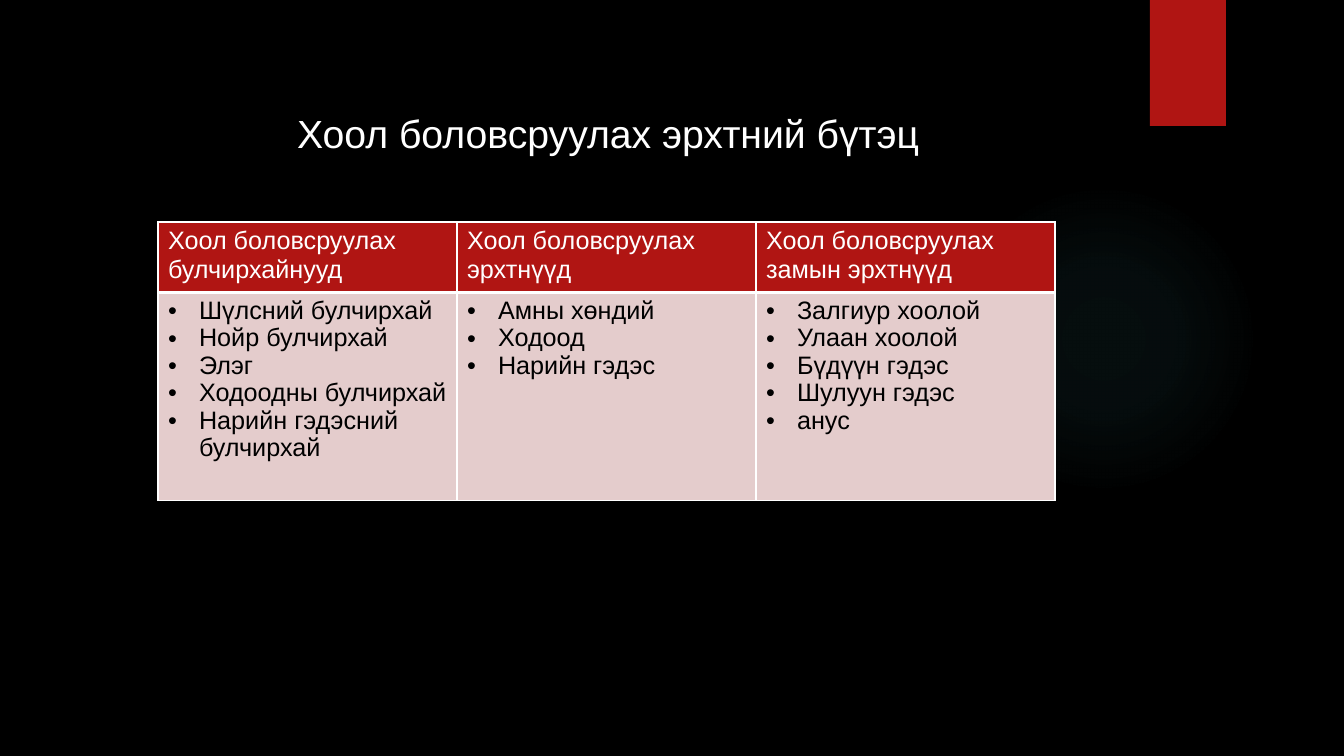
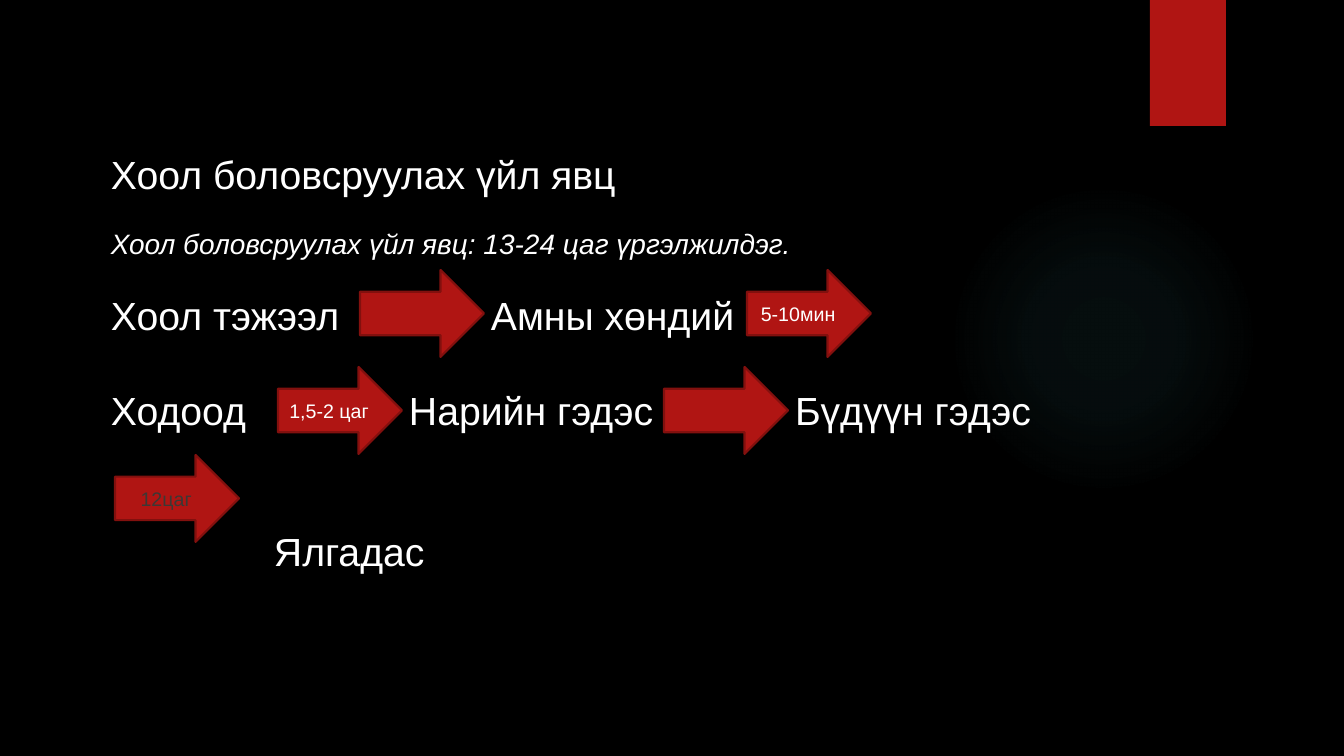
from pptx import Presentation
from pptx.dml.color import RGBColor
from pptx.enum.shapes import MSO_SHAPE
from pptx.enum.text import MSO_ANCHOR, PP_ALIGN
from pptx.oxml import parse_xml
from pptx.oxml.ns import nsdecls, qn
from pptx.util import Pt

PX = 914400 / 100.8
FONT = "Arial"
HEX = {
    "black": "000000", "white": "FFFFFF", "red": "B01513", "edge": "82100E",
    "pink": "E4CCCC", "gray": "3B3835", "glow": "50B9C1",
}
RGB = {name: RGBColor.from_string(code) for name, code in HEX.items()}


def write(frame, text, size=28, color="white", italic=False, align=PP_ALIGN.LEFT,
          bullet=False, wrap=True, pad=None):
    frame.word_wrap = wrap
    if pad is not None:
        frame.margin_left = frame.margin_right = pad
        frame.margin_top = frame.margin_bottom = pad
    for i, line in enumerate(text.split("\n")):
        para = frame.paragraphs[0] if i == 0 else frame.add_paragraph()
        para.alignment = align
        if bullet:
            para.line_spacing = 0.97
            props = para._p.get_or_add_pPr()
            props.set("marL", str(round(31 * PX)))
            props.set("indent", str(round(-31 * PX)))
            props.append(parse_xml(f'<a:buFont {nsdecls("a")} typeface="{FONT}"/>'))
            props.append(parse_xml(f'<a:buChar {nsdecls("a")} char="•"/>'))
        run = para.add_run()
        run.text = line
        run.font.name = FONT
        run.font.size = Pt(size)
        run.font.italic = italic
        run.font.color.rgb = RGB[color]


def draw(slide, kind, box, fill="red", edge=None):
    shape = slide.shapes.add_shape(kind, *(round(n * PX) for n in box))
    shape.shadow.inherit = False
    shape.fill.solid()
    shape.fill.fore_color.rgb = RGB[fill]
    if edge:
        shape.line.color.rgb = RGB[edge]
        shape.line.width = Pt(1.5)
    else:
        shape.line.fill.background()
    return shape


deck = Presentation()
deck.slide_width = round(1344 * PX)
deck.slide_height = round(756 * PX)

labels = [
    [("Хоол боловсруулах эрхтний бүтэц", 297, 109, 28)],
    [
        ("Хоол боловсруулах үйл явц", 111, 150, 28),
        ("Хоол боловсруулах үйл явц: 13-24 цаг үргэлжилдэг.", 111, 227, 20),
        ("Хоол тэжээл", 111, 291, 28),
        ("Амны хөндий", 491, 291, 28),
        ("Ходоод", 111, 386, 28),
        ("Нарийн гэдэс", 409, 386, 28),
        ("Бүдүүн гэдэс", 795, 386, 28),
        ("Ялгадас", 274, 527, 28),
    ],
]
stops = "".join(
    f'<a:gs pos="{pos}000"><a:srgbClr val="{HEX["glow"]}">'
    f'<a:alpha val="{alpha}000"/></a:srgbClr></a:gs>'
    for pos, alpha in [(0, 7), (36, 6), (69, 0)]
)
for texts in labels:
    slide = deck.slides.add_slide(deck.slide_layouts[6])
    slide.background.fill.solid()
    slide.background.fill.fore_color.rgb = RGB["black"]
    glow = draw(slide, MSO_SHAPE.OVAL, (949, 184, 310, 310), "glow")
    props = glow._element.spPr
    props.replace(props.find(qn("a:solidFill")), parse_xml(
        f'<a:gradFill {nsdecls("a")}><a:gsLst>{stops}</a:gsLst><a:path path="circle">'
        '<a:fillToRect l="50000" t="50000" r="50000" b="50000"/></a:path></a:gradFill>'))
    draw(slide, MSO_SHAPE.RECTANGLE, (1150, 0, 76, 126))
    for text, left, top, size in texts:
        high = 45 if size == 28 else 32
        box = slide.shapes.add_textbox(*(round(n * PX) for n in (left, top, 700, high)))
        write(box.text_frame, text, size, italic=size == 20, wrap=False, pad=0)

organs, process = deck.slides

columns = [
    ("Хоол боловсруулах булчирхайнууд",
     ["Шүлсний булчирхай", "Нойр булчирхай", "Элэг", "Ходоодны булчирхай",
      "Нарийн гэдэсний булчирхай"]),
    ("Хоол боловсруулах эрхтнүүд", ["Амны хөндий", "Ходоод", "Нарийн гэдэс"]),
    ("Хоол боловсруулах замын эрхтнүүд",
     ["Залгиур хоолой", "Улаан хоолой", "Бүдүүн гэдэс", "Шулуун гэдэс", "анус"]),
]
table = organs.shapes.add_table(
    2, 3, *(round(n * PX) for n in (158, 222, 897, 275))).table
table.first_row = table.horz_banding = False
for row, high in zip(table.rows, (67, 208)):
    row.height = round(high * PX)
for col, (head, items) in enumerate(columns):
    table.columns[col].width = round(299 * PX)
    for row, (text, fill, color) in enumerate(
            [(head, "red", "white"), ("\n".join(items), "pink", "black")]):
        cell = table.cell(row, col)
        write(cell.text_frame, text, 18, color, bullet=row == 1)
        props = cell._tc.get_or_add_tcPr()
        for side in "LRTB":
            thick = 3 if (row, side) in [(0, "B"), (1, "T")] else 1
            props.append(parse_xml(
                f'<a:ln{side} {nsdecls("a")} w="{Pt(thick)}"><a:solidFill>'
                f'<a:srgbClr val="{HEX["white"]}"/></a:solidFill></a:ln{side}>'))
        cell.fill.solid()
        cell.fill.fore_color.rgb = RGB[fill]

arrows = [
    (115, 455, "12цаг", "gray"),
    (747, 270, "5-10мин", "white"),
    (278, 367, "1,5-2 цаг", "white"),
    (360, 270, "", "white"),
    (664, 367, "", "white"),
]
for left, top, text, color in arrows:
    arrow = draw(process, MSO_SHAPE.RIGHT_ARROW, (left, top, 124, 87), edge="edge")
    if text:
        arrow.text_frame.vertical_anchor = MSO_ANCHOR.MIDDLE
        write(arrow.text_frame, text, 14, color, align=PP_ALIGN.CENTER, wrap=False)

deck.save("out.pptx")
